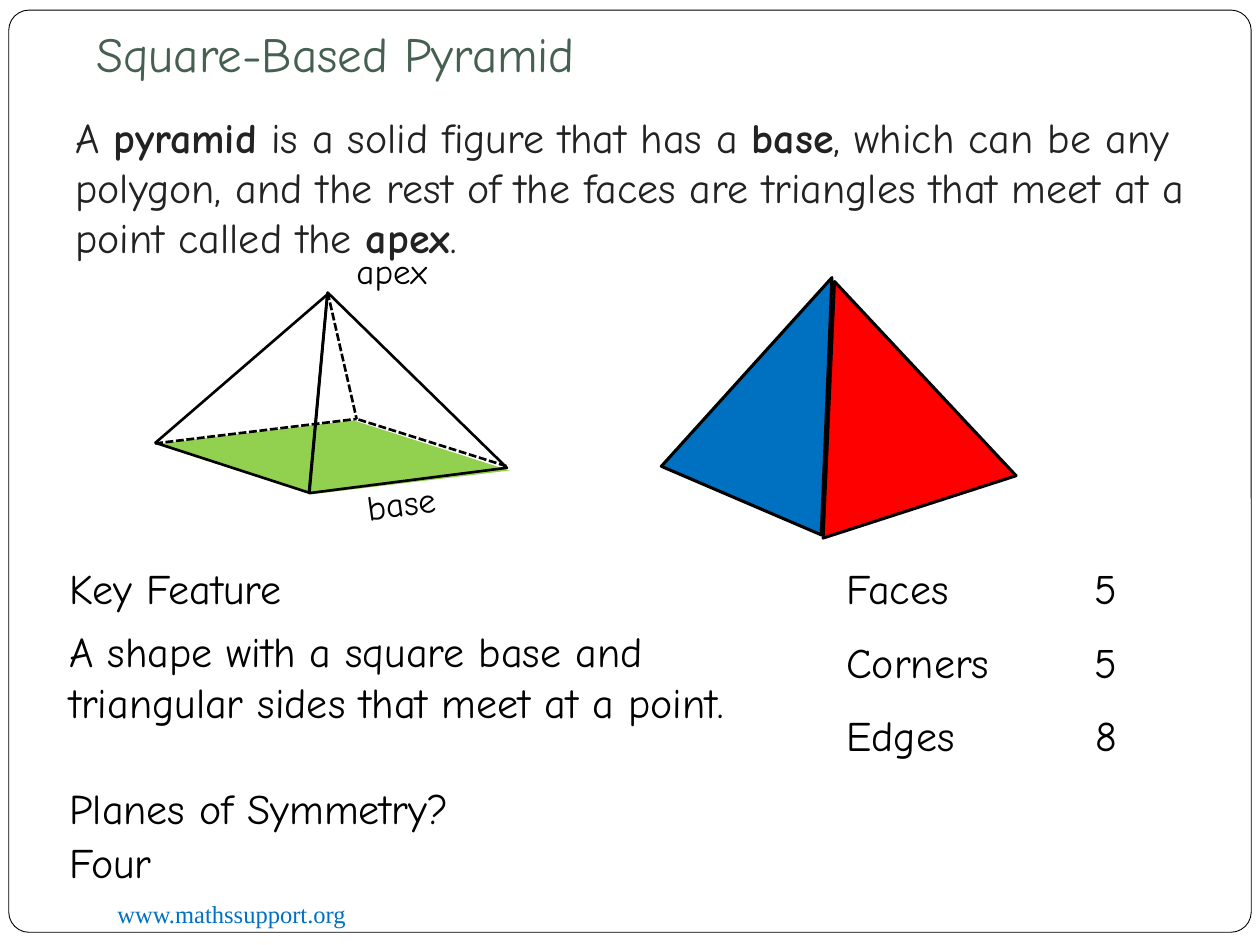
import pptx
import pptx.util
import pptx.dml.color
import pptx.enum.shapes
import pptx.enum.text
import pptx.enum.dml
import lxml.etree

Pt = pptx.util.Pt
Kind = pptx.enum.shapes.MSO_SHAPE
Anchor = pptx.enum.text.MSO_ANCHOR
Align = pptx.enum.text.PP_ALIGN
Fit = pptx.enum.text.MSO_AUTO_SIZE

theme = {
    "font": "Comic Neue", "web font": "Times New Roman",
    "ink": "000000", "paper": "FFFFFF", "title": "455F51", "body": "222222",
    "link": "0070C0", "base": "92D050", "left": "0070C0", "right": "FF0000",
    "title size": 28, "size": 24, "label size": 20, "web size": 14,
}


def tint(name):
    return pptx.dml.color.RGBColor.from_string(theme[name])


def write(box, runs, size="size", color="ink", font="font", inset=(7.2, 3.6, 7.2, 3.6),
          anchor=Anchor.TOP, align=Align.LEFT, wrap=True, fit=Fit.SHAPE_TO_FIT_TEXT, lead=None):
    frame = box.text_frame
    frame.word_wrap, frame.auto_size, frame.vertical_anchor = wrap, fit, anchor
    (frame.margin_left, frame.margin_top,
     frame.margin_right, frame.margin_bottom) = [Pt(side) for side in inset]
    line = frame.paragraphs[0]
    line.alignment = align
    if lead:
        line.line_spacing = lead
    for words, bold in runs:
        run = line.add_run()
        run.text = words
        run.font.name, run.font.size, run.font.bold = theme[font], Pt(theme[size]), bold
        run.font.color.rgb = tint(color)


deck = pptx.Presentation()
deck.slide_width, deck.slide_height = Pt(720), Pt(540)
slide = deck.slides.add_slide(deck.slide_layouts[5])
shapes = slide.shapes

border = shapes.add_shape(Kind.ROUNDED_RECTANGLE, Pt(5), Pt(5.75), Pt(710), Pt(527))
border.adjustments[0] = 0.022
border.shadow.inherit = False
border.fill.solid()
border.fill.fore_color.rgb = tint("paper")
border.line.color.rgb = tint("ink")
border.line.width = Pt(0.5)

web = shapes.add_textbox(Pt(60), Pt(510), Pt(234), Pt(24.25))
write(web, [("www.mathssupport.org", False)], size="web size", color="link", font="web font")

title = shapes.title
title.left, title.top, title.width, title.height = Pt(48), Pt(0), Pt(612), Pt(54)
web.element.addnext(title.element)
write(title, [("Square-Based Pyramid", False)], size="title size", color="title",
      inset=(7.2, 3.6, 7.2, 7.2), anchor=Anchor.BOTTOM, fit=Fit.NONE)

facts = [
    ("A shape with a square base and triangular sides that meet at a point.",
     353.5, 432, 65.5, None),
    ("Key Feature", 318, 174, 36, None),
    ("Planes of Symmetry?", 443.5, 264, 36, None),
    ("Four", 479.5, 114, 31, 0.8),
]
tight = {"inset": (3.6,) * 4, "anchor": Anchor.MIDDLE}
for words, top, width, height, lead in facts:
    box = shapes.add_textbox(Pt(36), Pt(top), Pt(width), Pt(height))
    write(box, [(words, False)], lead=lead, **tight)

counts = [("Faces", "5", 72), ("Corners", "5", 99.5), ("Edges", "8", 75)]
for row, (name, count, width) in enumerate(counts):
    top = Pt(318 + 42 * row)
    box = shapes.add_textbox(Pt(480), top, Pt(width), Pt(36))
    write(box, [(name, False)], wrap=False, **tight)
    box = shapes.add_textbox(Pt(600), top, Pt(42), Pt(36))
    write(box, [(count, False)], align=Align.RIGHT, **tight)

intro = shapes.add_textbox(Pt(36), Pt(60), Pt(648), Pt(94.5))
write(intro, [
    ("A\u00a0".replace("\u00a0", " "), False), ("pyramid", True),
    (" is a solid figure that has a ", False), ("base", True),
    (", which can be any polygon, and the rest of the faces are triangles "
     "that meet at a point called the ", False),
    ("apex", True), (".", False),
], color="body")

frame = shapes.add_group_shape()
solid = shapes.add_group_shape()
faces = [
    (frame, Kind.PARALLELOGRAM, (91.4, 237.6, 197.3, 47.5), 17.8, 2.179, "base", None),
    (frame, Kind.ISOSCELES_TRIANGLE, (103.7, 159.1, 92.2, 110.9), 18, 0.729, None, 1.5),
    (frame, Kind.ISOSCELES_TRIANGLE, (169.2, 162.7, 113.8, 112.3), 352.7, 0.219, None, 1.5),
    (solid, Kind.ISOSCELES_TRIANGLE, (401, 154.1, 99.4, 137.5), 23.2, 0.474, "left", 1.75),
    (solid, Kind.ISOSCELES_TRIANGLE, (446.4, 155.5, 115.9, 137.5), 342.1, 0.442, "right", 1.75),
]
for group, kind, place, turn, skew, fill, weight in faces:
    face = group.shapes.add_shape(kind, *[Pt(part) for part in place])
    face.rotation = turn
    face.adjustments[0] = skew
    face.shadow.inherit = False
    if fill:
        face.fill.solid()
        face.fill.fore_color.rgb = tint(fill)
    else:
        face.fill.background()
    if weight:
        face.line.color.rgb = tint("ink")
        face.line.width = Pt(weight)
    else:
        face.line.fill.background()

back = (203.8, 239.4)
for end in [(187.2, 167), (289.4, 266.4), (88.6, 253.4)]:
    edge = frame.shapes.add_connector(pptx.enum.shapes.MSO_CONNECTOR.STRAIGHT,
                                      *[Pt(part) for part in end + back])
    edge.line.color.rgb = tint("ink")
    edge.line.width = Pt(1.5)
    edge.line.dash_style = pptx.enum.dml.MSO_LINE.SQUARE_DOT
    props = edge.element.spPr
    lxml.etree.SubElement(props, pptx.oxml.ns.qn("a:effectLst"))

for words, left, top, turn in [("base", 202.3, 270, 352), ("apex", 196.6, 139, 0)]:
    label = shapes.add_textbox(Pt(left), Pt(top), Pt(80.6), Pt(31.5))
    label.rotation = turn
    write(label, [(words, False)], size="label size")

deck.save("out.pptx")
